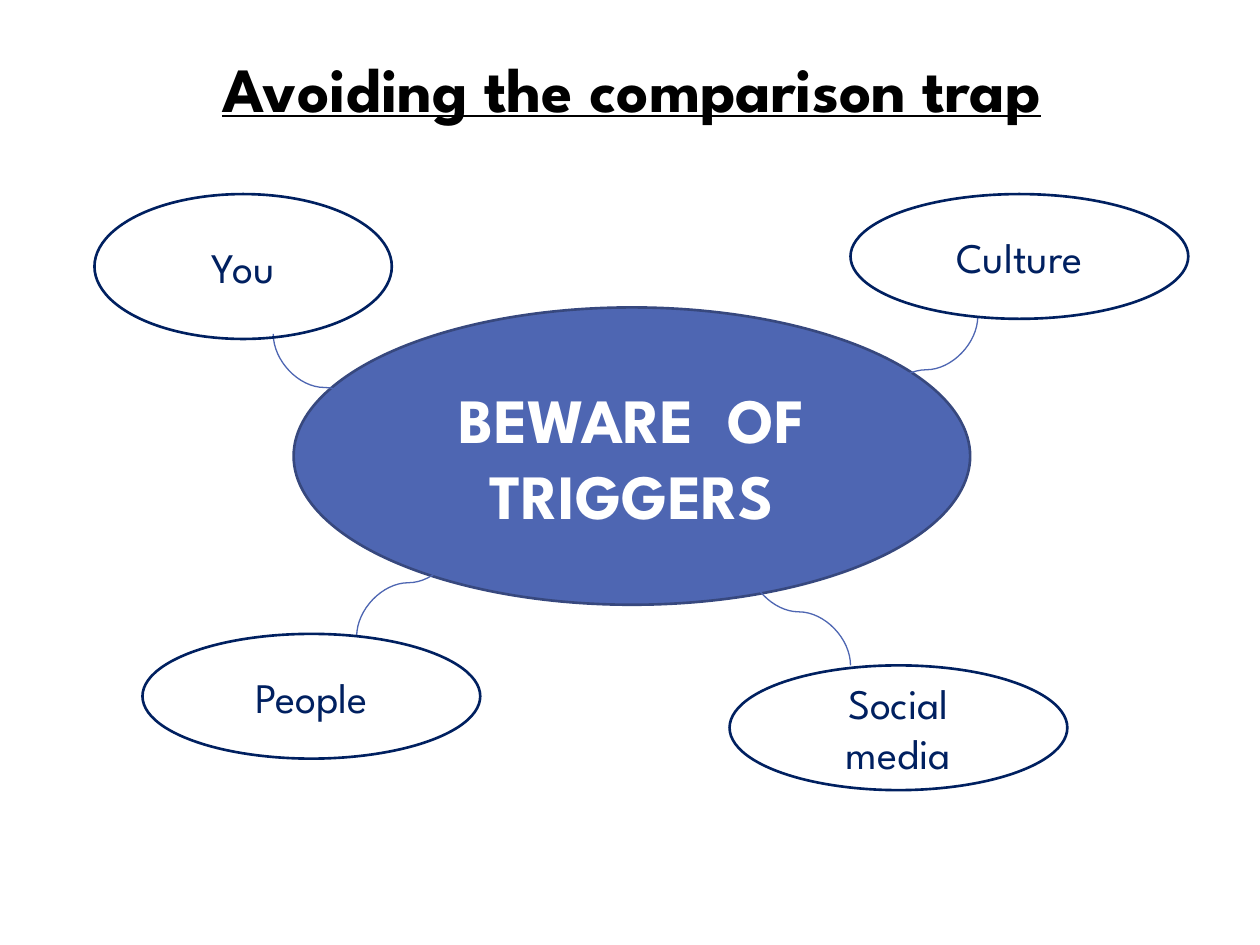
import dataclasses

import pptx
import pptx.dml.color
import pptx.enum.shapes
import pptx.enum.text
import pptx.oxml.ns
import pptx.util

Pt = pptx.util.Pt
qn = pptx.oxml.ns.qn
MSO_SHAPE = pptx.enum.shapes.MSO_SHAPE
MSO_CONNECTOR = pptx.enum.shapes.MSO_CONNECTOR


def rgb(value):
    return pptx.dml.color.RGBColor.from_string(value)


@dataclasses.dataclass(frozen=True)
class Theme:
    font: str = "League Spartan"
    black: str = "000000"
    white: str = "FFFFFF"
    blue: str = "4E66B2"
    edge: str = "37487E"
    navy: str = "002060"
    large: float = 36
    medium: float = 24
    outline: float = 1.5
    thin: float = 0.75


def write(tf, text, *, font, size, color, bold=False, underline=False):
    tf.word_wrap = True
    p = tf.paragraphs[0]
    p.alignment = pptx.enum.text.PP_ALIGN.CENTER
    r = p.add_run()
    r.text = text
    r.font.name = font
    r.font.size = Pt(size)
    r.font.color.rgb = rgb(color)
    r.font.bold = bold
    r.font.underline = underline


class Deck:
    def __init__(self, theme):
        self.theme = theme
        self.prs = pptx.Presentation()
        self.prs.slide_width, self.prs.slide_height = Pt(720), Pt(540)
        self.s = self.prs.slides.add_slide(self.prs.slide_layouts[6])

    def title(self, text, box):
        t = self.theme
        tf = self.s.shapes.add_textbox(*map(Pt, box)).text_frame
        write(tf, text, font=t.font, size=t.large, color=t.black, bold=True, underline=True)
        tf.auto_size = pptx.enum.text.MSO_AUTO_SIZE.SHAPE_TO_FIT_TEXT

    def ellipse(self, text, box, *, line, color, size, fill=None, bold=False):
        sp = self.s.shapes.add_shape(MSO_SHAPE.OVAL, *map(Pt, box))
        sp.shadow.inherit = False
        if fill:
            sp.fill.solid()
            sp.fill.fore_color.rgb = rgb(fill)
        else:
            sp.fill.background()
        sp.line.color.rgb = rgb(line)
        sp.line.width = Pt(self.theme.outline)
        sp.text_frame.vertical_anchor = pptx.enum.text.MSO_ANCHOR.MIDDLE
        write(sp.text_frame, text, font=self.theme.font, size=size, color=color, bold=bold)

    def vertical_curve(self, start, end):
        (x1, y1), (x2, y2) = start, end
        cx, cy = (x1 + x2) / 2, (y1 + y2) / 2
        dx, dy = x1 - cx, y1 - cy
        ends = (cx + dy, cy - dx, cx - dy, cy + dx)
        c = self.s.shapes.add_connector(MSO_CONNECTOR.CURVE, *map(Pt, ends))
        c.line.color.rgb = rgb(self.theme.blue)
        c.line.width = Pt(self.theme.thin)
        sp_pr = c._element.spPr
        sp_pr.find(qn("a:xfrm")).set("rot", str(90 * 60000))
        sp_pr.append(sp_pr.makeelement(qn("a:effectLst"), {}))

    def trigger(self, text, box, start, end):
        t = self.theme
        self.vertical_curve(start, end)
        self.ellipse(text, box, line=t.navy, color=t.navy, size=t.medium)


def main():
    t = Theme()
    deck = Deck(t)
    deck.title("Avoiding the comparison trap", (76.3, 24.5, 569.5, 51))
    deck.ellipse("BEWARE  OF TRIGGERS", (167.8, 175.7, 386.6, 169.9),
                 line=t.edge, color=t.white, size=t.large, fill=t.blue, bold=True)

    w, h = 193, 71.3
    triggers = [
        ("Culture", (486, 110.9, w, h), (499.7, 241.9), (558.7, 180.7)),
        ("Social media", (416.9, 380.2, w, h), (427, 319), (486, 380.2)),
        ("You", (54, 110.9, 169.9, 82.8), (214.6, 252), (156.2, 190.8)),
        ("People", (81.4, 362.2, w, h), (262.8, 302.4), (203.8, 363.6)),
    ]
    for text, box, start, end in triggers:
        deck.trigger(text, box, start, end)

    deck.prs.save("out.pptx")


if __name__ == "__main__":
    main()
